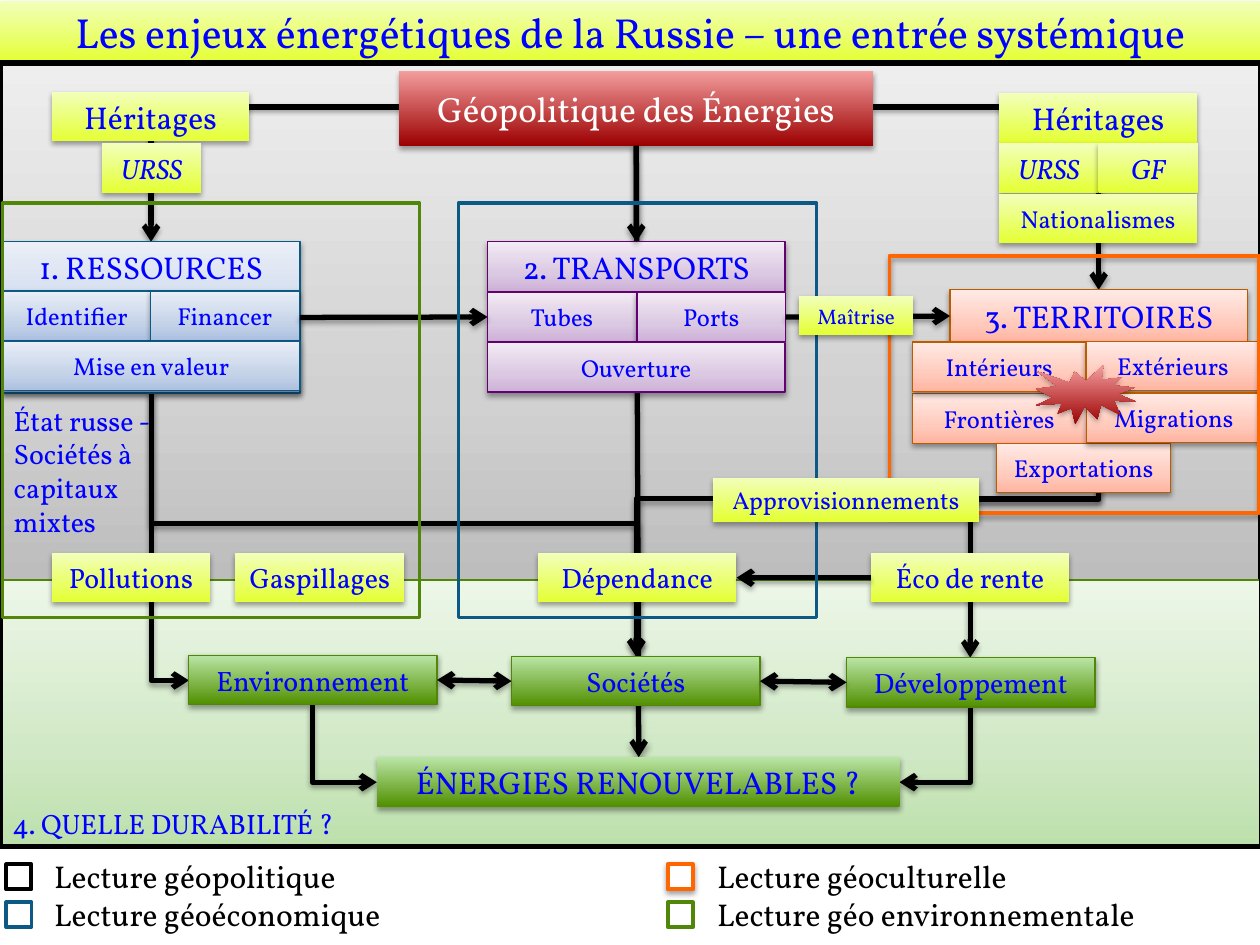
from copy import deepcopy

from pptx import Presentation
from pptx.dml.color import RGBColor
from pptx.enum.shapes import MSO_CONNECTOR, MSO_SHAPE
from pptx.enum.text import MSO_ANCHOR, MSO_AUTO_SIZE, PP_ALIGN
from pptx.oxml import parse_xml
from pptx.oxml.ns import nsdecls, qn
from pptx.util import Pt

RECT, SEAL = MSO_SHAPE.RECTANGLE, MSO_SHAPE.EXPLOSION1
STRAIGHT, ELBOW = MSO_CONNECTOR.STRAIGHT, MSO_CONNECTOR.ELBOW
TOP, MIDDLE, BOTTOM = MSO_ANCHOR.TOP, MSO_ANCHOR.MIDDLE, MSO_ANCHOR.BOTTOM
LEFT, CENTER = PP_ALIGN.LEFT, PP_ALIGN.CENTER
NO_AUTOFIT = MSO_AUTO_SIZE.NONE

FONT = "Vollkorn"
BLACK = RGBColor(0x00, 0x00, 0x00)
WHITE = RGBColor(0xFF, 0xFF, 0xFF)
BLUE = RGBColor(0x00, 0x00, 0xFF)
STEEL = RGBColor(0x0C, 0x59, 0x86)
ORANGE = RGBColor(0xFF, 0x66, 0x00)
LEAF = RGBColor(0x50, 0x87, 0x09)
VIOLET = RGBColor(0x64, 0x00, 0x72)
RUST = RGBColor(0xBB, 0x5C, 0x00)

# Gradients, from bottom to top
YELLOW_FADE = [(0, RGBColor(0xE4, 0xFF, 0x33)), (1, RGBColor(0xF2, 0xFF, 0xBB))]
RED_FADE = [(0, RGBColor(0x9C, 0x00, 0x01)), (1, RGBColor(0xF4, 0x9E, 0x9E))]
GREEN_FADE = [(0, RGBColor(0x51, 0x90, 0x00)), (1, RGBColor(0xBA, 0xE5, 0xA6))]
GREY_FADE = [(0, RGBColor(0xBD, 0xBD, 0xBD)), (0.35, RGBColor(0xD1, 0xD1, 0xD1)),
             (1, RGBColor(0xEE, 0xEE, 0xEE))]
PALE_GREEN_FADE = [(0, RGBColor(0xBC, 0xE0, 0xAB)), (0.35, RGBColor(0xD0, 0xE8, 0xC5)),
                   (1, RGBColor(0xED, 0xF7, 0xE8))]
BLUE_FADE = [(0, RGBColor(0xAB, 0xC0, 0xE0)), (0.35, RGBColor(0xC5, 0xD3, 0xE8)),
             (1, RGBColor(0xE9, 0xEE, 0xF7))]
VIOLET_FADE = [(0, RGBColor(0xCD, 0xB0, 0xD7)), (0.35, RGBColor(0xDB, 0xC8, 0xE2)),
               (1, RGBColor(0xF2, 0xEA, 0xF4))]
ORANGE_FADE = [(0, RGBColor(0xFF, 0xB4, 0xA0)), (0.35, RGBColor(0xFF, 0xCA, 0xBC)),
               (1, RGBColor(0xFF, 0xEA, 0xE5))]

SHADOW = (f'<a:effectLst {nsdecls("a")}><a:outerShdw blurRad="40000" dist="22000" '
          'dir="5400000" rotWithShape="0"><a:srgbClr val="000000"><a:alpha val="36000"/>'
          '</a:srgbClr></a:outerShdw></a:effectLst>')

prs = Presentation()
prs.slide_width, prs.slide_height = Pt(720), Pt(540)
slide = prs.slides.add_slide(prs.slide_layouts[3])
shapes = slide.shapes


def add_box(text, left, top, width, height=28.3, *, shape=None, preset=RECT, fade=None,
            fill=None, line=None, line_width=0.75, shadow=True, size=16, color=BLUE,
            italic=False, align=CENTER, anchor=MIDDLE, side=3, bottom=3.6):
    """Add a box, or format a given placeholder as one."""
    place = Pt(left), Pt(top), Pt(width), Pt(height)
    shape = shape or shapes.add_shape(preset, *place)
    shape.left, shape.top, shape.width, shape.height = place
    if fade:
        shape.fill.gradient()
        shape.fill.gradient_angle = 90
        stop_list = shape._element.spPr.find(".//" + qn("a:gsLst"))
        if len(fade) == 3:
            stop_list.insert(1, deepcopy(stop_list[0]))
        for stop, (position, stop_color) in zip(shape.fill.gradient_stops, fade):
            stop.position, stop.color.rgb = position, stop_color
    elif fill is not None:
        shape.fill.solid()
        shape.fill.fore_color.rgb = fill
    else:
        shape.fill.background()
    if line is None:
        shape.line.fill.background()
    else:
        shape.line.color.rgb, shape.line.width = line, Pt(line_width)
    effects = SHADOW if shadow else f'<a:effectLst {nsdecls("a")}/>'
    shape._element.spPr.append(parse_xml(effects))
    if text:
        frame = shape.text_frame
        frame.text = text
        frame.word_wrap, frame.auto_size = True, NO_AUTOFIT
        frame.vertical_anchor = anchor
        frame.margin_left, frame.margin_right = Pt(side), Pt(3)
        frame.margin_top, frame.margin_bottom = Pt(3.6), Pt(bottom)
        for paragraph in frame.paragraphs:
            paragraph.alignment, paragraph.space_before = align, Pt(0)
            font = paragraph.runs[0].font
            font.name, font.size, font.italic = FONT, Pt(size), italic
            font.color.rgb = color
    return shape


def add_arrow(x1, y1, x2, y2, preset=None, vertical_first=False, two_way=False):
    """Add a straight arrow, or an elbow when a bent preset is named."""
    if vertical_first:  # a quarter turn about the centre
        mid_x, mid_y = (x1 + x2) / 2, (y1 + y2) / 2
        half_w, half_h = (y2 - y1) / 2, (x1 - x2) / 2
        x1, y1, x2, y2 = mid_x - half_w, mid_y - half_h, mid_x + half_w, mid_y + half_h
    arrow = shapes.add_connector(ELBOW if preset else STRAIGHT, Pt(x1), Pt(y1), Pt(x2), Pt(y2))
    properties = arrow._element.spPr
    if preset:
        properties.find(qn("a:prstGeom")).set("prst", preset)
    if vertical_first:
        properties.find(qn("a:xfrm")).set("rot", "5400000")
    arrow.line.color.rgb, arrow.line.width = BLACK, Pt(3)
    for end in ["headEnd", "tailEnd"] if two_way else ["tailEnd"]:
        properties.find(qn("a:ln")).append(parse_xml(f'<a:{end} {nsdecls("a")} type="arrow"/>'))
    properties.append(parse_xml(SHADOW))
    return arrow


# Title
add_box("Les enjeux énergétiques de la Russie – une entrée systémique", 0, 0.7, 720, 35.3,
        shape=shapes.title, fade=YELLOW_FADE, size=24)

# Background panels
add_box("État russe -\nSociétés à\ncapitaux\nmixtes", 0.7, 35.3, 718.6, 296, fade=GREY_FADE,
        line=BLACK, shadow=False, align=LEFT, anchor=BOTTOM, side=7.2, bottom=24)
add_box("4. QUELLE DURABILITÉ ?", 0, 331.5, 720, 152, fade=PALE_GREEN_FADE, line=LEAF,
        shadow=False, align=LEFT, anchor=BOTTOM, side=7.2)

# Arrows that run behind the boxes
add_arrow(363.6, 82.8, 365, 432.7)
for x1, y1, x2, y2, preset, vertical_first in [
    (499, 61.2, 627.8, 165.6, "bentConnector2", False),
    (228.2, 61.2, 86.4, 138.2, "bentConnector2", False),
    (86.4, 224.6, 108, 388.8, "bentConnector2", True),
    (554.4, 404, 514, 447, "bentConnector2", True),
    (178.6, 403, 215.3, 447, "bentConnector2", True),
    (627.8, 195, 363.6, 375.1, "bentConnector3", True),
    (627.8, 195, 554.4, 375.8, "bentConnector3", True),
    (86.4, 223.2, 363.6, 375.1, "bentConnector3", True),
]:
    add_arrow(x1, y1, x2, y2, preset, vertical_first)

# Main boxes
geopolitics = add_box("Géopolitique des Énergies", 228.2, 40.3, 270.7, 43, fade=RED_FADE,
                      size=20, color=WHITE)
resources = add_box("1. RESSOURCES", 1.4, 138.2, 170, 86.4, fade=BLUE_FADE, line=STEEL,
                    size=18, anchor=TOP)
territories = add_box("3. TERRITOIRES", 542.9, 165.6, 170, 30, fade=ORANGE_FADE, line=RUST,
                      size=18)
add_box("ÉNERGIES RENOUVELABLES ?", 215.3, 432.7, 298.8, fade=GREEN_FADE, size=18)

# Boxes of each family: text, left, top, width, size
families = [
    (YELLOW_FADE, None, [
        ("Héritages", 29.5, 52.6, 113, 18), ("URSS", 58.3, 82, 56.7, 16),
        ("Héritages", 571, 53.3, 113, 18), ("URSS", 571, 82, 56.7, 16),
        ("GF", 627.7, 82, 56.7, 16), ("Nationalismes", 571, 110.9, 113, 14),
        ("Pollutions", 29.5, 316, 90.7, 16), ("Gaspillages", 134.6, 316, 96.5, 16),
        ("Dépendance", 307.4, 316, 113.5, 16), ("Éco de rente", 497.5, 316, 113.5, 16)]),
    (BLUE_FADE, STEEL, [
        ("Identifier", 1.4, 166.3, 85, 14), ("Financer", 86, 166.3, 85, 14),
        ("Mise en valeur", 1.4, 195.1, 170, 14)]),
    (VIOLET_FADE, VIOLET, [
        ("2. TRANSPORTS", 278.6, 138.2, 170, 18), ("Tubes", 278.6, 167, 85, 14),
        ("Ports", 364, 167, 85, 14), ("Ouverture", 278.6, 195.8, 170, 14)]),
    (ORANGE_FADE, RUST, [
        ("Frontières", 521.3, 225, 99.4, 14), ("Exportations", 569.5, 253.4, 99.4, 14),
        ("Intérieurs", 521.3, 195.5, 99.4, 14), ("Extérieurs", 620.6, 195.1, 99.4, 14),
        ("Migrations", 621, 224.6, 99.4, 14)]),
    (GREEN_FADE, LEAF, [
        ("Environnement", 107.8, 374.4, 142, 16), ("Sociétés", 292.3, 375.1, 142, 16),
        ("Développement", 483.8, 375.8, 142, 16)]),
]
boxes = {}
for fade, outline, members in families:
    for text, left, top, width, size in members:
        boxes[text] = add_box(text, left, top, width, fade=fade, line=outline, size=size,
                              italic=text in ("URSS", "GF"))
add_box("", 591.8, 208.8, 57.6, 33.8, preset=SEAL, fade=RED_FADE)

# Arrows joined to the boxes: source, side, target, side, two-way
for source, source_side, target, target_side, two_way in [
    (geopolitics, 2, boxes["2. TRANSPORTS"], 0, False),
    (resources, 3, boxes["Tubes"], 1, False),
    (boxes["Ports"], 3, territories, 1, False),
    (boxes["Éco de rente"], 1, boxes["Dépendance"], 3, False),
    (boxes["Environnement"], 3, boxes["Sociétés"], 1, True),
    (boxes["Sociétés"], 3, boxes["Développement"], 1, True),
]:
    link = add_arrow(0, 0, 0, 0, two_way=two_way)
    link.begin_connect(source, source_side)
    link.end_connect(target, target_side)

# Legend
for placeholder, text, left in [
    (slide.placeholders[1], "Lecture géopolitique\nLecture géoéconomique", 1.4),
    (slide.placeholders[2], "Lecture géoculturelle\nLecture géo environnementale", 380.2),
]:
    legend = add_box(text, left, 483.1, 339.8, 56.9, shape=placeholder, shadow=False,
                     size=18, color=BLACK, align=LEFT, side=29.5)
    for paragraph in legend.text_frame.paragraphs:
        bullet_format = paragraph._p.get_or_add_pPr()
        bullet_format.set("marL", "0")
        bullet_format.set("indent", "0")
        bullet_format.append(parse_xml(f'<a:buNone {nsdecls("a")}/>'))

# Reading frames, each with its legend key
for color, weight, key_left, key_top, frame_place in [
    (BLACK, 3, 3.6, 493.9, (0, 36, 720.7, 447.8)),
    (STEEL, 2, 3.6, 515.5, (262.1, 115.9, 204.5, 236.9)),
    (ORANGE, 2.25, 381.6, 493.9, (508.3, 146.2, 211, 146.9)),
    (LEAF, 2, 381.6, 515.5, (1.4, 115.9, 238.3, 236.9)),
]:
    shaded = color == ORANGE
    add_box("", key_left, key_top, 14.4, 14.4, fill=WHITE, line=color,
            line_width=min(weight, 2.25), shadow=shaded)
    add_box("", *frame_place, line=color, line_width=weight, shadow=shaded)

# Labels laid over the frames
add_box("Maîtrise", 456.5, 169.2, 65.5, 22.3, fade=YELLOW_FADE, size=12)
add_box("Approvisionnements", 407.5, 272.9, 151.9, 25.2, fade=YELLOW_FADE, size=14)

prs.save("out.pptx")
